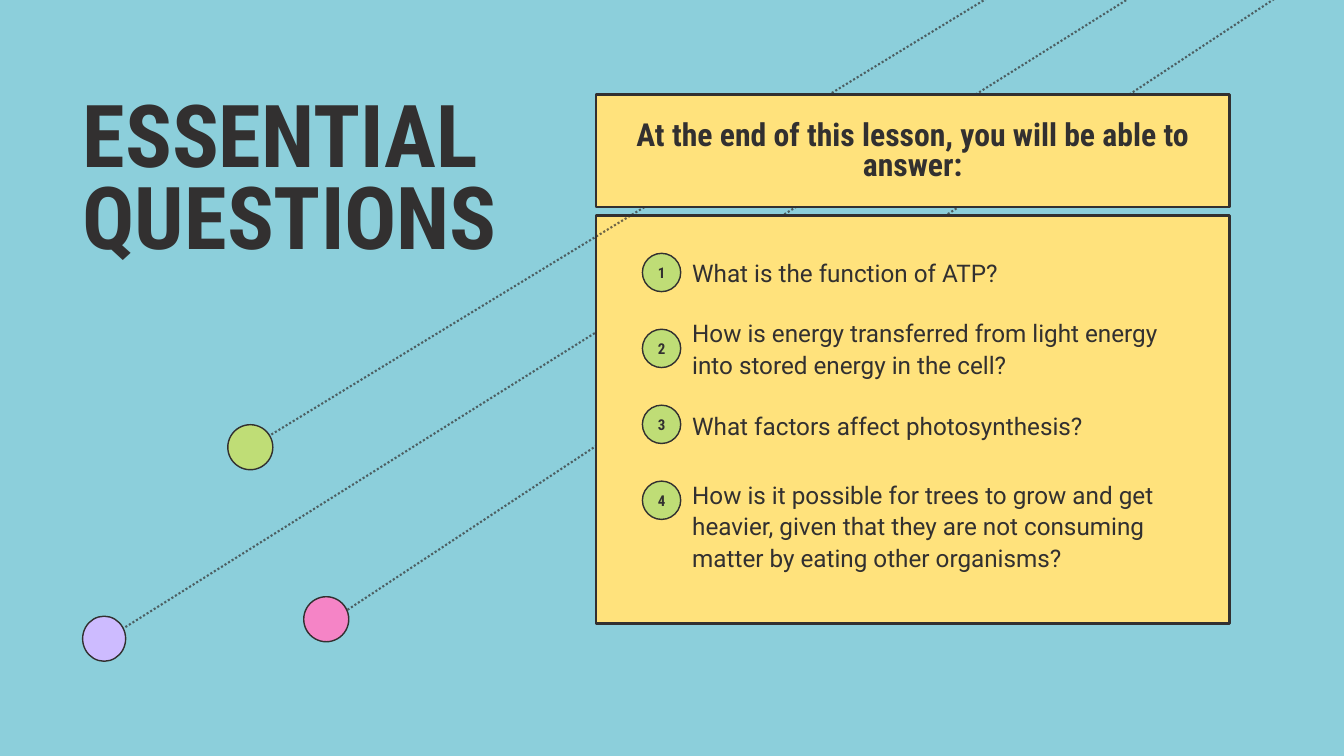
"""Builds the Essential Questions slide."""
from lxml.etree import SubElement
from pptx import Presentation
from pptx.dml.color import RGBColor
from pptx.enum.dml import MSO_LINE_DASH_STYLE as Dash
from pptx.enum.shapes import MSO_CONNECTOR as Connector, MSO_SHAPE as Shape
from pptx.enum.text import MSO_ANCHOR as Anchor, MSO_AUTO_SIZE as AutoSize, PP_ALIGN as Align
from pptx.oxml.ns import qn
from pptx.util import Inches, Pt

COLORS = {"sky": "8CCFDB", "ink": "323030", "yellow": "FFE27C",
          "green": "BFDD76", "lilac": "CDBBFF", "pink": "F584C6"}

TITLE = ["ESSENTIAL", "QUESTIONS"]
HEADING = "At the end of this lesson, you will be able to answer:"
QUESTIONS = [
    ("What is the function of ATP?", 3.8, 0.46),
    ("How is energy transferred from light energy into stored energy in the cell?", 4.7, 0.93),
    ("What factors affect photosynthesis?", 6.08, 0.46),
    ("How is it possible for trees to grow and get heavier, given that they are "
     "not consuming matter by eating other organisms?", 7.11, 1.4),
]

BACK_RAYS = [(1.55, 9.53, 17.88, -0.7), (4.86, 9.28, 20, -0.7)]
FRONT_RAY = (3.72, 6.66, 17.78, -1.91)
DOTS = [("lilac", 1.23, 9.17, 0.64, 0.67),
        ("green", 3.39, 6.32, 0.67, 0.67),
        ("pink", 4.52, 8.88, 0.67, 0.67)]
QUESTION_PANEL = (8.87, 3.21, 9.43, 6.07)
HEADING_PANEL = (8.87, 1.41, 9.43, 1.67)
BADGE_LEFT, BADGE_TOP, BADGE_SIZE, BADGE_STEP = 9.56, 3.77, 0.57, 1.13

TITLE_STYLE = {"name": "Roboto Condensed", "size": Pt(93), "bold": True}
HEADING_STYLE = {"name": "Roboto Condensed", "size": Pt(34), "bold": True}
BADGE_STYLE = {"name": "Roboto Condensed", "size": Pt(16), "bold": True}
QUESTION_STYLE = {"name": "Roboto", "size": Pt(26), "bold": False}


def color(name):
    return RGBColor.from_string(COLORS[name])


def write(frame, lines, style, spacing, align=Align.LEFT, inset=0):
    frame.word_wrap = True
    for side in ("left", "top", "right", "bottom"):
        setattr(frame, f"margin_{side}", Inches(inset))
    for index, line in enumerate(lines):
        para = frame.add_paragraph() if index else frame.paragraphs[0]
        para.alignment = align
        para.line_spacing = Pt(spacing)
        span = para.add_run()
        span.text = line
        for key, value in style.items():
            setattr(span.font, key, value)
        span.font.color.rgb = color("ink")


def add_text(slide, place, *text, **options):
    box = slide.shapes.add_textbox(*map(Inches, place))
    write(box.text_frame, *text, **options)
    box.text_frame.auto_size = AutoSize.SHAPE_TO_FIT_TEXT


def add_outlined(slide, kind, place, fill, width):
    shape = slide.shapes.add_shape(kind, *map(Inches, place))
    shape.shadow.inherit = False
    shape.fill.solid()
    shape.fill.fore_color.rgb = color(fill)
    shape.line.color.rgb = color("ink")
    shape.line.width = Pt(width)
    return shape


def add_ray(slide, ends):
    ray = slide.shapes.add_connector(Connector.STRAIGHT, *map(Inches, ends))
    ray.line.color.rgb = color("ink")
    ray.line.width = Pt(2.25)
    ray.line.dash_style = Dash.ROUND_DOT
    properties = ray._element.spPr
    SubElement(properties.find(".//" + qn("a:srgbClr")), qn("a:alpha"), val="70000")
    SubElement(properties, qn("a:effectLst"))


def main():
    deck = Presentation()
    deck.slide_width, deck.slide_height = Inches(20), Inches(11.25)
    slide = deck.slides.add_slide(deck.slide_layouts[6])
    slide.background.fill.solid()
    slide.background.fill.fore_color.rgb = color("sky")

    for ends in BACK_RAYS:
        add_ray(slide, ends)
    add_outlined(slide, Shape.RECTANGLE, QUESTION_PANEL, "yellow", 3)
    add_ray(slide, FRONT_RAY)
    for fill, *place in DOTS:
        add_outlined(slide, Shape.OVAL, place, fill, 1.5)

    add_text(slide, (1.23, 1.52, 6.73, 2.53), TITLE, TITLE_STYLE, 88.3)
    add_outlined(slide, Shape.RECTANGLE, HEADING_PANEL, "yellow", 3)
    add_text(slide, (9.37, 1.82, 8.42, 0.94), [HEADING], HEADING_STYLE, 32.3, align=Align.CENTER)

    for index, (question, top, height) in enumerate(QUESTIONS):
        place = (BADGE_LEFT, BADGE_TOP + index * BADGE_STEP, BADGE_SIZE, BADGE_SIZE)
        badge = add_outlined(slide, Shape.OVAL, place, "green", 1.5)
        badge.text_frame.vertical_anchor = Anchor.MIDDLE
        write(badge.text_frame, [str(index + 1)], BADGE_STYLE, 19.2, Align.CENTER)
        add_text(slide, (10.3, top, 7.31, height), [question], QUESTION_STYLE, 33.8)

    deck.save("out.pptx")


if __name__ == "__main__":
    main()
